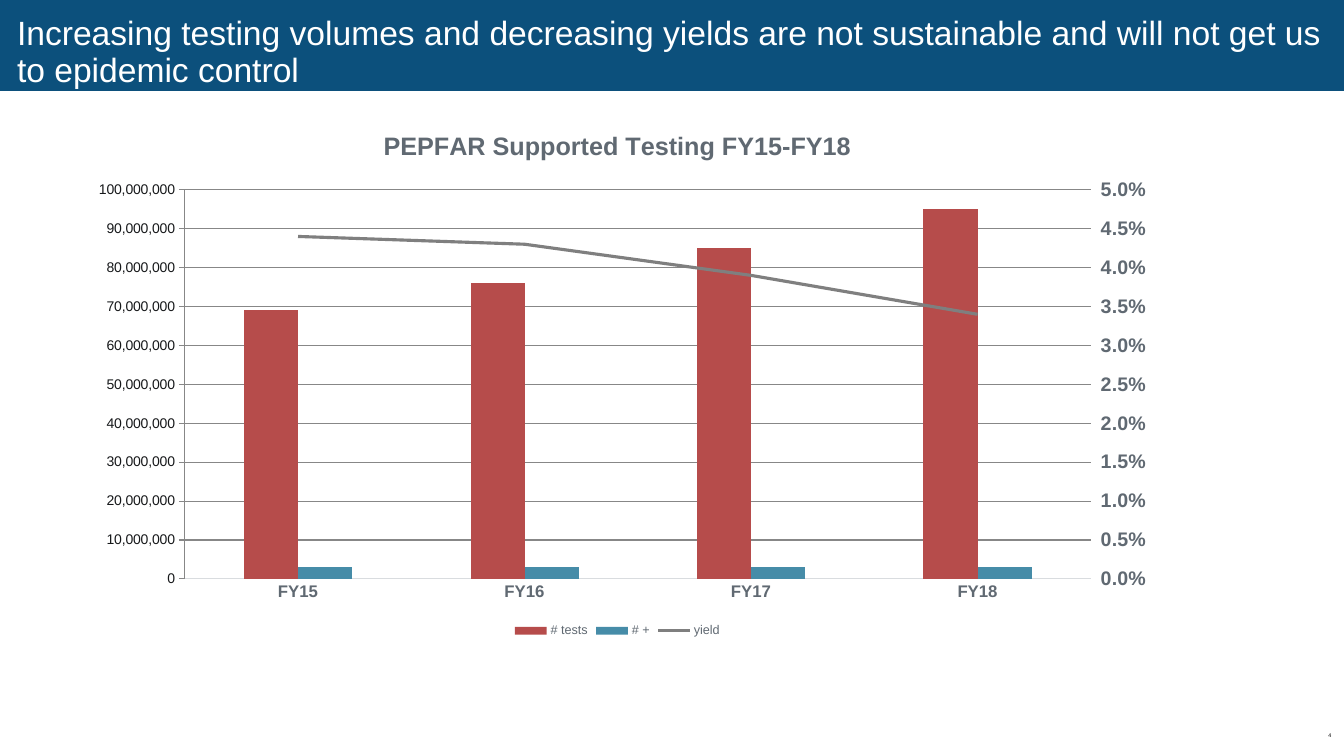
"""Build the slide on testing volumes and yields, FY15 to FY18."""
from pptx import Presentation
from pptx import util as u
from pptx.chart import axis as chart_axis
from pptx.chart import data
from pptx.dml.color import RGBColor
from pptx.enum import chart as ch
from pptx.enum import shapes, text
from pptx.oxml import parse_xml
from pptx.oxml.ns import qn

HEADLINE = ("Increasing testing volumes and decreasing yields are not "
            "sustainable and will not get us to epidemic control")
CHART_TITLE = "PEPFAR Supported Testing FY15-FY18"
PAGE_NUMBER = "4"
YEARS = ["FY15", "FY16", "FY17", "FY18"]

WHITE = RGBColor(0xFF, 0xFF, 0xFF)
NAVY = RGBColor(0x0C, 0x50, 0x7C)
INK = RGBColor(0x06, 0x06, 0x06)
CHART_INK = RGBColor(0x16, 0x18, 0x1A)
SLATE = RGBColor(0x60, 0x69, 0x72)
PALE = RGBColor(0xD9, 0xDC, 0xDF)
RED = RGBColor(0xB6, 0x4C, 0x4B)
BLUE = RGBColor(0x46, 0x8C, 0xA8)
GREY = RGBColor(0x7F, 0x7F, 0x7F)

COUNTS = "#,##0"
PERCENT = "0.0%"
SERIES = [
    ("# tests", [69000000, 76000000, 85000000, 95000000], COUNTS),
    ("# +", [3000000, 3000000, 3000000, 3000000], COUNTS),
    ("yield", [0.044, 0.043, 0.039, 0.034], PERCENT),
]
BAR_COLORS = [RED, BLUE]

WIDTH, HEIGHT = 960, 540
BAND = (0, 0, WIDTH, 65)
HEADLINE_BOX = (12.2, 12, 947.8, 52)
NUMBER_BOX = (908, 511.2, 46, 28.8)
CHART_BOX = (46.8, 77.8, 788.4, 380.9)
PLOT_BOX = (132, 135.6, 647.2, 278)

CHART_NS = 'xmlns:c="http://schemas.openxmlformats.org/drawingml/2006/chart"'
YEAR_AXIS_ID, YIELD_AXIS_ID = 5001, 5002
LINE_PLOT = f"""<c:lineChart {CHART_NS}><c:grouping val="standard"/>
<c:varyColors val="0"/><c:marker val="1"/>
<c:axId val="{YEAR_AXIS_ID}"/><c:axId val="{YIELD_AXIS_ID}"/></c:lineChart>"""


def points(values):
    return [u.Pt(value) for value in values]


def set_font(font, size, color, bold=False):
    font.name = "Arial"
    font.size = u.Pt(size)
    font.bold = bold
    font.color.rgb = color


def write(frame, content, size, color, bold=False, align=None, spacing=None):
    paragraph = frame.paragraphs[0]
    paragraph.alignment = align
    paragraph.line_spacing = spacing
    run = paragraph.add_run()
    run.text = content
    set_font(run.font, size, color, bold)


def add_box(slide, box, anchor, margin):
    frame = slide.shapes.add_textbox(*points(box)).text_frame
    frame.word_wrap = True
    frame.vertical_anchor = anchor
    frame.margin_left = frame.margin_right = u.Pt(margin)
    frame.margin_top = frame.margin_bottom = u.Pt(margin / 2)
    return frame


def axis_xml(kind, axis_id, cross_id, position, hidden, crosses):
    return parse_xml(
        f'<c:{kind} {CHART_NS}><c:axId val="{axis_id}"/>'
        f'<c:scaling><c:orientation val="minMax"/></c:scaling>'
        f'<c:delete val="{hidden}"/><c:axPos val="{position}"/>'
        f'<c:majorTickMark val="out"/><c:tickLblPos val="nextTo"/>'
        f'<c:crossAx val="{cross_id}"/><c:crosses val="{crosses}"/></c:{kind}>')


def move_yield_to_line(chart):
    plot_area = chart.plots[0]._element.getparent()
    bars = plot_area.find(qn("c:barChart"))
    yield_series = bars.findall(qn("c:ser"))[-1]
    for bar_setting in yield_series.findall(qn("c:invertIfNegative")):
        yield_series.remove(bar_setting)
    line_plot = parse_xml(LINE_PLOT)
    line_plot.find(qn("c:varyColors")).addnext(yield_series)
    bars.addnext(line_plot)
    yield_axis = axis_xml("valAx", YIELD_AXIS_ID, YEAR_AXIS_ID, "r", 0, "max")
    year_axis = axis_xml("catAx", YEAR_AXIS_ID, YIELD_AXIS_ID, "b", 1, "autoZero")
    plot_area.find(qn("c:valAx")).addnext(yield_axis)
    yield_axis.addnext(year_axis)
    return chart_axis.ValueAxis(yield_axis)


def place_plot(chart):
    plot_area = chart.plots[0]._element.getparent()
    left, top, width, height = CHART_BOX
    x, y, w, h = PLOT_BOX
    shares = {"x": (x - left) / width, "y": (y - top) / height,
              "w": w / width, "h": h / height}
    sizes = "".join(f'<c:{key} val="{share:.4f}"/>' for key, share in shares.items())
    for old in plot_area.findall(qn("c:layout")):
        plot_area.remove(old)
    plot_area.insert(0, parse_xml(
        f'<c:layout {CHART_NS}><c:manualLayout><c:layoutTarget val="inner"/>'
        f'<c:xMode val="edge"/><c:yMode val="edge"/>{sizes}'
        f'</c:manualLayout></c:layout>'))


def style_value_axis(axis, size, maximum, number_format, tick):
    axis.minimum_scale = 0
    axis.maximum_scale = maximum
    axis.major_unit = maximum / 10
    axis.major_tick_mark = tick
    axis.tick_labels.number_format = number_format
    axis.tick_labels.number_format_is_linked = False
    axis.format.line.fill.background()
    set_font(axis.tick_labels.font, size, SLATE, bold=True)


def style_line(line, color, width):
    line.color.rgb = color
    line.width = u.Pt(width)


def add_testing_chart(slide):
    chart_data = data.CategoryChartData()
    chart_data.categories = YEARS
    for name, values, number_format in SERIES:
        chart_data.add_series(name, values, number_format)
    chart = slide.shapes.add_chart(
        ch.XL_CHART_TYPE.COLUMN_CLUSTERED, *points(CHART_BOX), chart_data).chart
    set_font(chart.font, 10, CHART_INK)
    write(chart.chart_title.text_frame, CHART_TITLE, 18, SLATE, bold=True)
    chart.chart_title.include_in_layout = False
    chart.has_legend = True
    chart.legend.position = ch.XL_LEGEND_POSITION.BOTTOM
    chart.legend.include_in_layout = False
    set_font(chart.legend.font, 9, SLATE)

    yield_axis = move_yield_to_line(chart)
    place_plot(chart)
    bars, line_plot = chart.plots
    bars.gap_width = 219
    bars.overlap = 0
    bars.vary_by_categories = False
    for series, color in zip(bars.series, BAR_COLORS):
        series.format.fill.solid()
        series.format.fill.fore_color.rgb = color
    yield_line = line_plot.series[0]
    yield_line.smooth = False
    yield_line.marker.style = ch.XL_MARKER_STYLE.NONE
    style_line(yield_line.format.line, GREY, 2.25)

    years = chart.category_axis
    years.major_tick_mark = ch.XL_TICK_MARK.NONE
    style_line(years.format.line, PALE, 0.75)
    set_font(years.tick_labels.font, 12, SLATE, bold=True)
    style_value_axis(chart.value_axis, 12, 100000000, COUNTS, ch.XL_TICK_MARK.NONE)
    style_line(chart.value_axis.major_gridlines.format.line, PALE, 0.75)
    style_value_axis(yield_axis, 14, 0.05, PERCENT, ch.XL_TICK_MARK.OUTSIDE)


def main():
    presentation = Presentation()
    presentation.slide_width, presentation.slide_height = points((WIDTH, HEIGHT))
    slide = presentation.slides.add_slide(presentation.slide_layouts[6])
    band = slide.shapes.add_shape(shapes.MSO_SHAPE.RECTANGLE, *points(BAND))
    band.shadow.inherit = False
    band.fill.solid()
    band.fill.fore_color.rgb = NAVY
    band.line.fill.background()
    write(add_box(slide, NUMBER_BOX, text.MSO_ANCHOR.MIDDLE, 3),
          PAGE_NUMBER, 3.8, INK, align=text.PP_ALIGN.RIGHT)
    write(add_box(slide, HEADLINE_BOX, text.MSO_ANCHOR.TOP, 0),
          HEADLINE, 24, WHITE, spacing=0.9)
    add_testing_chart(slide)
    presentation.save("out.pptx")


if __name__ == "__main__":
    main()
